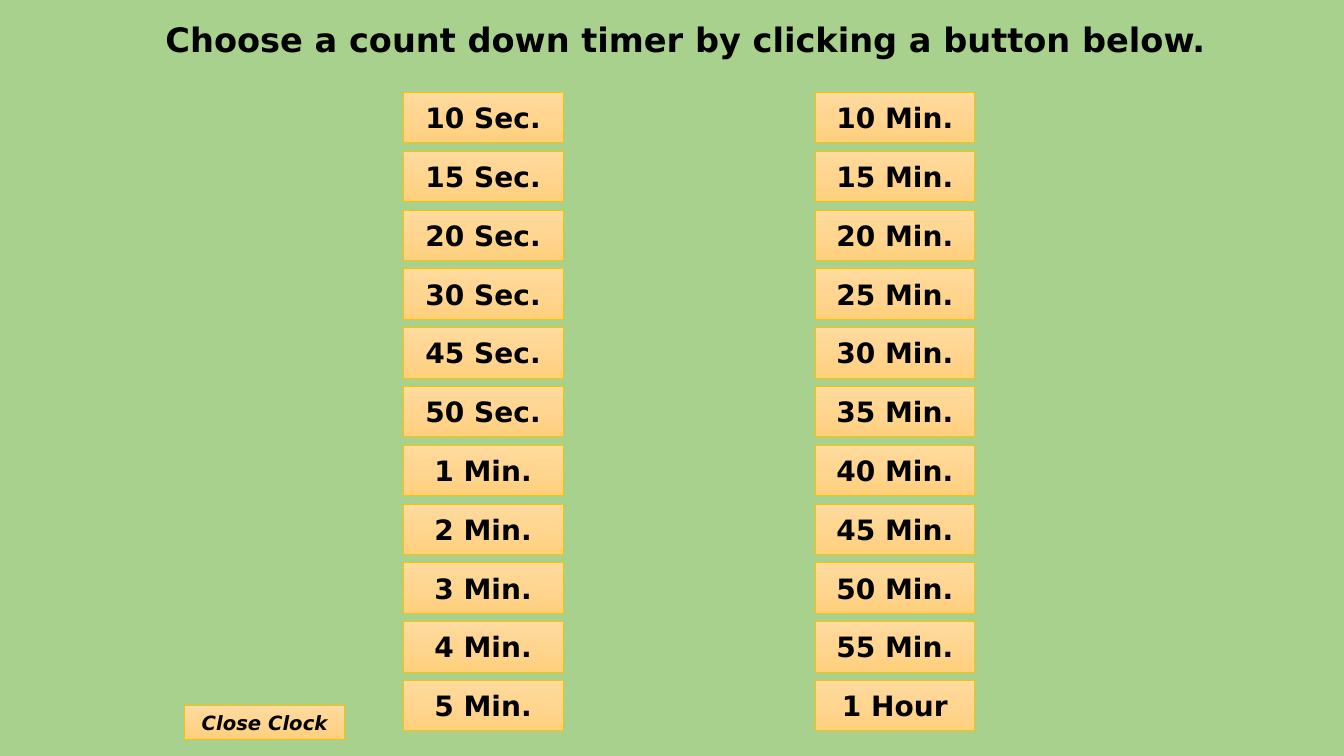
import copy
import pptx
import pptx.util
import pptx.dml.color
import pptx.enum.shapes
import pptx.enum.text

SHAPE = pptx.enum.shapes.MSO_SHAPE
ANCHOR = pptx.enum.text.MSO_ANCHOR
COLORS = {"background": "A9D18E", "text": "000000", "border": "FFC000",
          "top": "FFDB9E", "middle": "FFD590", "bottom": "FFD07C"}
FONT = "DejaVu Sans"

prs = pptx.Presentation()
prs.slide_width = pptx.util.Inches(13.33)
prs.slide_height = pptx.util.Inches(7.5)
UNIT = prs.slide_height / 90

slide = prs.slides.add_slide(prs.slide_layouts[6])
slide.background.fill.solid()
slide.background.fill.fore_color.rgb = pptx.dml.color.RGBColor.from_string(COLORS["background"])


def write(s, text, size, anchor, italic=False):
    tf = s.text_frame
    tf.vertical_anchor = anchor
    p = tf.paragraphs[0]
    p.alignment = pptx.enum.text.PP_ALIGN.CENTER
    r = p.add_run()
    r.text = text
    r.font.name = FONT
    r.font.size = pptx.util.Pt(size)
    r.font.bold = True
    r.font.italic = italic
    r.font.color.rgb = pptx.dml.color.RGBColor.from_string(COLORS["text"])
    return tf


def add_button(kind, col, row, height):
    s = slide.shapes.add_shape(kind, *[round(n * UNIT) for n in (col, row, 19, height)])
    s.shadow.inherit = False
    s.fill.gradient()
    stops = s._element.xpath(".//a:gsLst")[0]
    stops.insert(1, copy.deepcopy(stops[0]))
    s.fill.gradient_angle = 270
    for i, (stop, name) in enumerate(zip(s.fill.gradient_stops, ("top", "middle", "bottom"))):
        stop.position = i / 2
        stop.color.rgb = pptx.dml.color.RGBColor.from_string(COLORS[name])
    s.line.color.rgb = pptx.dml.color.RGBColor.from_string(COLORS["border"])
    s.line.width = pptx.util.Pt(0.5)
    return s


title = slide.shapes.add_textbox(*[round(n * UNIT) for n in (15.6, -2.5, 132, 15)])
tf = write(title, "Choose a count down timer by clicking a button below.", 24, ANCHOR.MIDDLE)
tf.word_wrap = True
tf.paragraphs[0].line_spacing = 0.9

timers = {
    48: ["10 Sec.", "15 Sec.", "20 Sec.", "30 Sec.", "45 Sec.", "50 Sec.",
         "1 Min.", "2 Min.", "3 Min.", "4 Min.", "5 Min."],
    97: [f"{minutes} Min." for minutes in range(10, 60, 5)] + ["1 Hour"],
}
for col, labels in timers.items():
    for i, label in enumerate(labels):
        s = add_button(SHAPE.ACTION_BUTTON_CUSTOM, col, 11 + 7 * i, 6)
        tf = write(s, label, 20, ANCHOR.MIDDLE)
        tf.word_wrap = False

close = add_button(SHAPE.RECTANGLE, 22, 84, 4)
tf = write(close, "Close Clock", 14, ANCHOR.TOP, italic=True)
tf.word_wrap = True
tf.auto_size = pptx.enum.text.MSO_AUTO_SIZE.SHAPE_TO_FIT_TEXT

prs.save("out.pptx")
